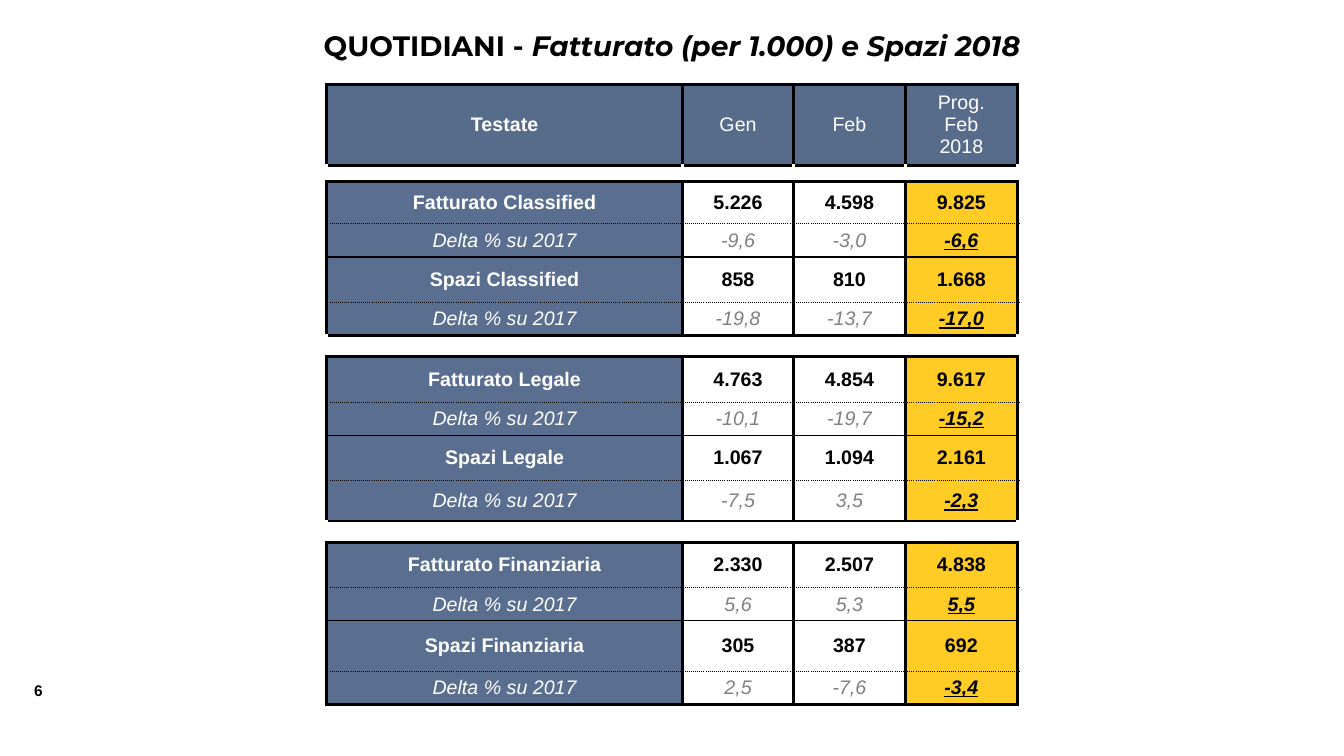
import pptx
import pptx.dml.color
import pptx.enum.text
import pptx.util
from lxml import etree
from pptx.oxml.ns import qn

WIDTH, HEIGHT = 13.33, 7.5
BLACK, WHITE, GREY = "000000", "FFFFFF", "808080"
HEADER_BLUE, LABEL_BLUE, YELLOW = "576B8A", "5A6F90", "FFCB25"
THICK, THIN, DOTTED = (2.25, "solid"), (1, "solid"), (1, "sysDot")

COLUMNS = [3.53, 1.10, 1.11, 1.11]
HEADER_HEIGHT = 0.80
HEADINGS = ["Testate", "Gen", "Feb", "Prog.\vFeb\v2018"]
DELTA = "Delta % su 2017"

# Each block: height of the gap above it, then its rows as (height, texts)
BLOCKS = [
    (0.16, [(0.42, ["Fatturato Classified", "5.226", "4.598", "9.825"]),
            (0.33, [DELTA, "-9,6", "-3,0", "-6,6"]),
            (0.45, ["Spazi Classified", "858", "810", "1.668"]),
            (0.33, [DELTA, "-19,8", "-13,7", "-17,0"])]),
    (0.21, [(0.45, ["Fatturato Legale", "4.763", "4.854", "9.617"]),
            (0.33, [DELTA, "-10,1", "-19,7", "-15,2"]),
            (0.45, ["Spazi Legale", "1.067", "1.094", "2.161"]),
            (0.40, [DELTA, "-7,5", "3,5", "-2,3"])]),
    (0.21, [(0.45, ["Fatturato Finanziaria", "2.330", "2.507", "4.838"]),
            (0.33, [DELTA, "5,6", "5,3", "5,5"]),
            (0.50, ["Spazi Finanziaria", "305", "387", "692"]),
            (0.33, [DELTA, "2,5", "-7,6", "-3,4"])]),
]
# Top and bottom border of the four rows in a block
ROW_EDGES = [(THICK, DOTTED), (DOTTED, THIN), (THIN, DOTTED), (DOTTED, THICK)]


def color(value):
    return pptx.dml.color.RGBColor.from_string(value)


def set_font(font, size, value, name="Arial", bold=False, italic=False):
    font.name = name
    font.size = pptx.util.Pt(size)
    font.color.rgb = color(value)
    font.bold = bold
    font.italic = italic


def place(shape, left, top, width, height):
    shape.left, shape.top = pptx.util.Inches(left), pptx.util.Inches(top)
    shape.width, shape.height = pptx.util.Inches(width), pptx.util.Inches(height)


def set_borders(cell, top, bottom, side_color=BLACK):
    properties = cell._tc.get_or_add_tcPr()
    edges = {"lnL": (THICK, side_color), "lnR": (THICK, side_color),
             "lnT": (top, BLACK), "lnB": (bottom, BLACK)}
    for tag, ((width, dash), value) in edges.items():
        line = etree.SubElement(properties, qn("a:" + tag), w=str(pptx.util.Pt(width)))
        fill = etree.SubElement(line, qn("a:solidFill"))
        etree.SubElement(fill, qn("a:srgbClr"), val=value)
        etree.SubElement(line, qn("a:prstDash"), val=dash)


def set_fill(cell, value):
    if value is None:
        cell.fill.background()
    else:
        cell.fill.solid()
        cell.fill.fore_color.rgb = color(value)


def set_margins(cell, horizontal, vertical):
    cell.margin_left = cell.margin_right = pptx.util.Inches(horizontal)
    cell.margin_top = cell.margin_bottom = pptx.util.Inches(vertical)


def write_cell(cell, text, value, bold=False, italic=False, underline=False):
    cell.text = text
    cell.vertical_anchor = pptx.enum.text.MSO_ANCHOR.MIDDLE
    para = cell.text_frame.paragraphs[0]
    para.alignment = pptx.enum.text.PP_ALIGN.CENTER
    set_font(para.font, 14, value, bold=bold, italic=italic)
    if underline:
        para.font.underline = True


def fill_header(row):
    for index, cell in enumerate(row.cells):
        set_margins(cell, 0.1, 0.05)
        set_borders(cell, THICK, THICK)
        set_fill(cell, HEADER_BLUE)
        write_cell(cell, HEADINGS[index], WHITE, bold=index == 0)


def fill_gap(row, merged):
    for cell in row.cells:
        set_margins(cell, 0, 0)
        set_borders(cell, THICK, THICK, WHITE)
        set_fill(cell, WHITE)
        # A tiny empty paragraph lets the row stay low
        etree.SubElement(cell.text_frame.paragraphs[0]._p, qn("a:endParaRPr"), sz="400")
    if merged:
        row.cells[0].merge(row.cells[len(COLUMNS) - 1])


def fill_row(row, texts, edges):
    delta = texts[0] == DELTA
    for index, cell in enumerate(row.cells):
        label, total = index == 0, index == len(COLUMNS) - 1
        set_margins(cell, *((0.1, 0.05) if label else (0, 0)))
        set_borders(cell, *edges)
        set_fill(cell, LABEL_BLUE if label else YELLOW if total else None)
        value = WHITE if label else GREY if delta and not total else BLACK
        write_cell(cell, texts[index], value, bold=total or not delta,
                   italic=delta, underline=delta and total)


def add_figures(page):
    heights = [HEADER_HEIGHT]
    for gap, rows in BLOCKS:
        heights += [gap] + [height for height, texts in rows]
    frame = page.shapes.add_table(len(heights), len(COLUMNS), 0, 0, 0, 0)
    place(frame, 3.24, 0.84, sum(COLUMNS), sum(heights))
    table = frame.table
    table.first_row = table.horz_banding = False
    for column, width in zip(table.columns, COLUMNS):
        column.width = pptx.util.Inches(width)
    for row, height in zip(table.rows, heights):
        row.height = pptx.util.Inches(height)

    table_rows = iter(table.rows)
    fill_header(next(table_rows))
    for number, (gap, rows) in enumerate(BLOCKS):
        fill_gap(next(table_rows), merged=number > 0)
        for (height, texts), edges in zip(rows, ROW_EDGES):
            fill_row(next(table_rows), texts, edges)


def add_title(page):
    title = page.shapes.title
    place(title, WIDTH / 8, 0.23, WIDTH * 0.75, 0.44)
    frame = title.text_frame
    frame.word_wrap = True
    frame.auto_size = pptx.enum.text.MSO_AUTO_SIZE.NONE
    frame.vertical_anchor = pptx.enum.text.MSO_ANCHOR.TOP
    para = frame.paragraphs[0]
    para.alignment = pptx.enum.text.PP_ALIGN.CENTER
    for text, italic in [("QUOTIDIANI - ", False),
                         ("Fatturato (per 1.000) e Spazi 2018", True)]:
        span = para.add_run()
        span.text = text
        set_font(span.font, 20, BLACK, "Montserrat", bold=True, italic=italic)


def add_page_number(page):
    box = page.shapes.add_textbox(0, 0, 0, 0)
    place(box, 0.24, 6.71, 0.42, 0.29)
    box.text_frame.word_wrap = False
    para = box.text_frame.paragraphs[0]
    para.text = "6"
    set_font(para.font, 11, BLACK, bold=True)


def main():
    deck = pptx.Presentation()
    deck.slide_width = pptx.util.Inches(WIDTH)
    deck.slide_height = pptx.util.Inches(HEIGHT)
    page = deck.slides.add_slide(deck.slide_layouts.get_by_name("Title Only"))
    add_title(page)
    add_figures(page)
    add_page_number(page)
    deck.save("out.pptx")


if __name__ == "__main__":
    main()
